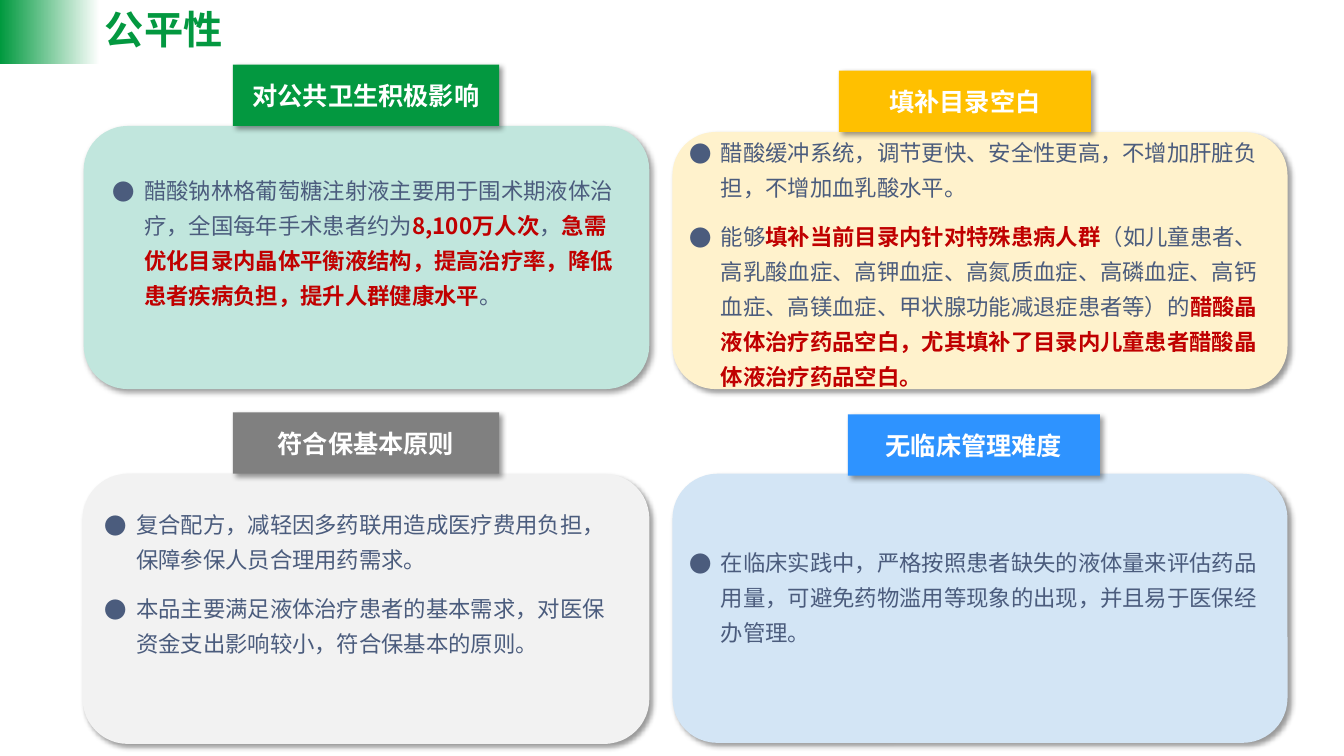
from dataclasses import dataclass

from lxml.etree import SubElement
from pptx import Presentation
from pptx.dml.color import RGBColor
from pptx.enum.shapes import MSO_SHAPE
from pptx.enum.text import MSO_ANCHOR, MSO_AUTO_SIZE, PP_ALIGN
from pptx.oxml.ns import qn
from pptx.util import Inches, Pt


@dataclass(frozen=True)
class Theme:
    font: str = "Noto Sans CJK SC"
    title_size: int = 28
    heading_size: int = 18
    body_size: int = 16
    green: str = "039840"
    corner: str = "00993E"
    white: str = "FFFFFF"
    body: str = "4B5C7D"
    accent: str = "C00000"
    mint: str = "C1E6DD"
    cream: str = "FFF2CC"
    amber: str = "FFC000"
    light_gray: str = "F2F2F2"
    gray: str = "808080"
    light_blue: str = "D3E5F5"
    blue: str = "2E93FF"


class SlideBuilder:
    def __init__(self, slide, theme):
        self.slide = slide
        self.theme = theme

    def format_run(self, run, size, color, bold):
        run.font.name = self.theme.font
        run.font.size = Pt(size)
        run.font.bold = bold
        run.font.color.rgb = RGBColor.from_string(color)
        east_asian = SubElement(run.font._element, qn("a:ea"))
        east_asian.set("typeface", self.theme.font)

    def add_shadow(self, shape):
        shape.shadow.inherit = False
        effects = shape._element.spPr.find(qn("a:effectLst"))
        shadow = SubElement(effects, qn("a:outerShdw"), blurRad=str(Pt(4)), dist=str(Pt(3)),
                            dir="2700000", algn="tl", rotWithShape="0")
        color = SubElement(shadow, qn("a:srgbClr"), val="000000")
        SubElement(color, qn("a:alpha"), val="40000")

    def add_block(self, kind, box, color):
        shape = self.slide.shapes.add_shape(kind, *map(Inches, box))
        shape.fill.solid()
        shape.fill.fore_color.rgb = RGBColor.from_string(color)
        shape.line.fill.background()
        self.add_shadow(shape)
        return shape

    def add_corner(self, box):
        shape = self.slide.shapes.add_shape(MSO_SHAPE.RECTANGLE, *map(Inches, box))
        shape.shadow.inherit = False
        shape.line.fill.background()
        shape.fill.gradient()
        shape.fill.gradient_angle = 180
        for stop, color in zip(shape.fill.gradient_stops, (self.theme.white, self.theme.corner)):
            stop.color.rgb = RGBColor.from_string(color)

    def add_heading(self, box, color, text):
        shape = self.add_block(MSO_SHAPE.RECTANGLE, box, color)
        shape.text_frame.text = text
        shape.text_frame.vertical_anchor = MSO_ANCHOR.MIDDLE
        paragraph = shape.text_frame.paragraphs[0]
        paragraph.alignment = PP_ALIGN.CENTER
        self.format_run(paragraph.runs[0], self.theme.heading_size, self.theme.white, True)

    def place(self, placeholder, box, anchor):
        placeholder.left, placeholder.top, placeholder.width, placeholder.height = map(Inches, box)
        placeholder._element.getparent().append(placeholder._element)
        text_frame = placeholder.text_frame
        text_frame.word_wrap = True
        text_frame.auto_size = MSO_AUTO_SIZE.NONE
        text_frame.vertical_anchor = anchor
        return text_frame

    def add_title(self, box, text):
        text_frame = self.place(self.slide.shapes.title, box, MSO_ANCHOR.MIDDLE)
        text_frame.text = text
        paragraph = text_frame.paragraphs[0]
        paragraph.alignment = PP_ALIGN.LEFT
        paragraph.line_spacing = 0.9
        self.format_run(paragraph.runs[0], self.theme.title_size, self.theme.green, True)

    def add_bullet(self, paragraph):
        properties = paragraph._p.get_or_add_pPr()
        properties.set("marL", str(Inches(0.31)))
        properties.set("indent", str(Inches(-0.31)))
        color = SubElement(properties, qn("a:buClr"))
        SubElement(color, qn("a:srgbClr"), val=self.theme.body)
        SubElement(properties, qn("a:buFont"), typeface=self.theme.font)
        SubElement(properties, qn("a:buChar"), char="●")

    def add_list(self, index, box, items):
        text_frame = self.place(self.slide.placeholders[index], box, MSO_ANCHOR.TOP)
        for number, pieces in enumerate(items):
            paragraph = text_frame.add_paragraph() if number else text_frame.paragraphs[0]
            self.add_bullet(paragraph)
            paragraph.line_spacing = 1.3
            paragraph.space_before = Pt(10 if number else 0)
            for position, text in enumerate(pieces):
                run = paragraph.add_run()
                run.text = text
                strong = position % 2 == 1
                color = self.theme.accent if strong else self.theme.body
                self.format_run(run, self.theme.body_size, color, strong)


def main():
    theme = Theme()
    presentation = Presentation()
    presentation.slide_width = Inches(13.33)
    presentation.slide_height = Inches(7.5)
    comparison_layout = presentation.slide_layouts[4]
    builder = SlideBuilder(presentation.slides.add_slide(comparison_layout), theme)

    panels = [
        ((0.83, 1.25, 5.61, 2.61), theme.mint, (2.31, 0.64, 2.64, 0.61), theme.green,
         "对公共卫生积极影响", (1.02, 1.63, 5.24, 2.2),
         [["醋酸钠林格葡萄糖注射液主要用于围术期液体治疗，全国每年手术患者约为", "8,100万人次", "，",
           "急需优化目录内晶体平衡液结构，提高治疗率，降低患者疾病负担，提升人群健康水平", "。"]]),
        ((6.67, 1.31, 6.1, 2.55), theme.cream, (8.32, 0.7, 2.5, 0.61), theme.amber,
         "填补目录空白", (6.74, 1.25, 5.85, 2.6),
         [["醋酸缓冲系统，调节更快、安全性更高，不增加肝脏负担，不增加血乳酸水平。"],
          ["能够", "填补当前目录内针对特殊患病人群",
           "（如儿童患者、高乳酸血症、高钾血症、高氮质血症、高磷血症、高钙血症、高镁血症、甲状腺功能减退症患者等）的",
           "醋酸晶液体治疗药品空白，尤其填补了目录内儿童患者醋酸晶体液治疗药品空白。"]]),
        ((0.82, 4.7, 5.62, 2.68), theme.light_gray, (2.31, 4.09, 2.64, 0.61), theme.gray,
         "符合保基本原则", (0.94, 4.94, 5.33, 1.57),
         [["复合配方，减轻因多药联用造成医疗费用负担，保障参保人员合理用药需求。"],
          ["本品主要满足液体治疗患者的基本需求，对医保资金支出影响较小，符合保基本的原则。"]]),
        ((6.67, 4.7, 6.1, 2.67), theme.light_blue, (8.41, 4.11, 2.5, 0.61), theme.blue,
         "无临床管理难度", (6.74, 5.32, 6.02, 1.5),
         [["在临床实践中，严格按照患者缺失的液体量来评估药品用量，可避免药物滥用等现象的出现，并且易于医保经办管理。"]]),
    ]

    builder.add_corner((0, 0, 0.99, 0.64))
    builder.add_title((0.94, 0, 2.95, 0.63), "公平性")
    for index, panel in enumerate(panels, start=1):
        card_box, card_color, heading_box, heading_color, heading, list_box, items = panel
        builder.add_block(MSO_SHAPE.ROUNDED_RECTANGLE, card_box, card_color)
        builder.add_heading(heading_box, heading_color, heading)
        builder.add_list(index, list_box, items)

    presentation.save("out.pptx")


if __name__ == "__main__":
    main()
